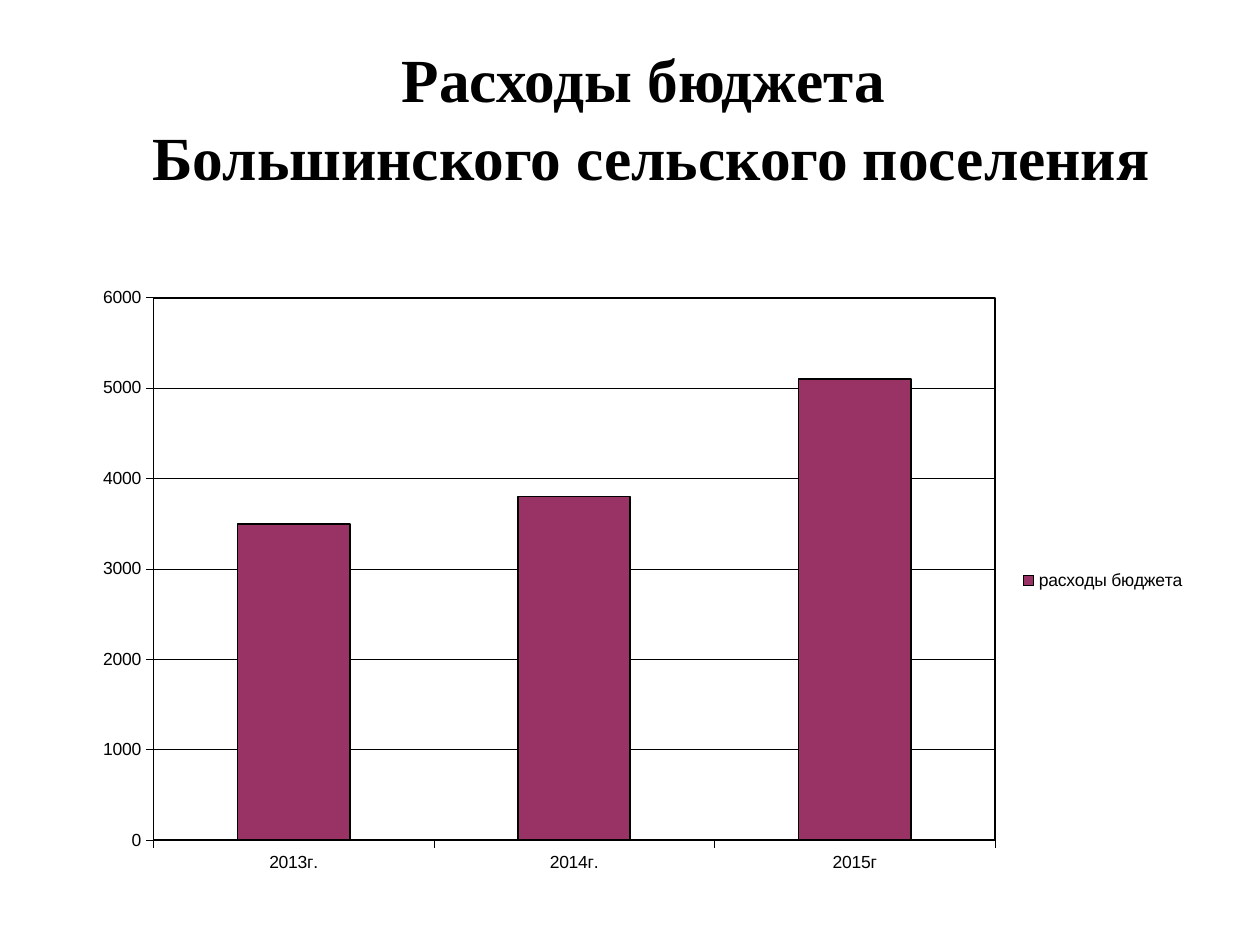
"""Build a slide with a column chart of the settlement's budget spending."""
from lxml import etree
from pptx import Presentation
from pptx import util as u
from pptx.chart import data as chart_data
from pptx.dml import color
from pptx.enum import chart as ch, text
from pptx.oxml import ns


def rgb(value):
    return color.RGBColor.from_string(value)


def style_line(line, width):
    line.color.rgb = rgb("000000")
    line.width = u.Pt(width)


presentation = Presentation()
presentation.slide_width = u.Cm(25.4)
presentation.slide_height = u.Cm(19.05)
slide = presentation.slides.add_slide(presentation.slide_layouts[5])

title = slide.shapes.title
title.left, title.top = u.Cm(1.7), u.Cm(0.64)
title.width, title.height = u.Cm(22.86), u.Cm(4.78)
frame = title.text_frame
frame.word_wrap = True
frame.auto_size = text.MSO_AUTO_SIZE.NONE
frame.vertical_anchor = text.MSO_ANCHOR.TOP
for index, line_text in enumerate(["Расходы бюджета ", "Большинского сельского поселения"]):
    paragraph = frame.add_paragraph() if index else frame.paragraphs[0]
    paragraph.alignment = text.PP_ALIGN.CENTER
    paragraph.line_spacing = 1.05
    paragraph.space_before = u.Pt(0)
    run = paragraph.add_run()
    run.text = line_text
    run.font.name = "Times New Roman"
    run.font.size = u.Pt(35)
    run.font.bold = True
    run.font.color.rgb = rgb("000000")

spending = chart_data.CategoryChartData()
spending.categories = ["2013г.", "2014г.", "2015г"]
spending.add_series("расходы бюджета", [3500, 3800, 5100])
chart = slide.shapes.add_chart(
    ch.XL_CHART_TYPE.COLUMN_CLUSTERED,
    u.Cm(1.63), u.Cm(5.56), u.Cm(22.53), u.Cm(12.29), spending,
).chart
chart.has_title = False
chart.font.name = "Arial"
chart.font.size = u.Pt(10)
chart.font.color.rgb = rgb("000000")
chart.has_legend = True
chart.legend.position = ch.XL_LEGEND_POSITION.RIGHT
chart.legend.include_in_layout = False

plot = chart.plots[0]
plot.gap_width = 150
plot.vary_by_categories = False
series = plot.series[0]
series.format.fill.solid()
series.format.fill.fore_color.rgb = rgb("993366")
style_line(series.format.line, 1)

for axis in (chart.category_axis, chart.value_axis):
    axis.major_tick_mark = ch.XL_TICK_MARK.OUTSIDE
    axis.minor_tick_mark = ch.XL_TICK_MARK.NONE
    style_line(axis.format.line, 0.25)
value_axis = chart.value_axis
value_axis.minimum_scale, value_axis.maximum_scale = 0, 6000
value_axis.major_unit = 1000
value_axis.has_major_gridlines = True
style_line(value_axis.major_gridlines.format.line, 0.25)

plot_area = plot._element.getparent()
for old_layout in plot_area.findall(ns.qn("c:layout")):
    plot_area.remove(old_layout)
layout = etree.Element(ns.qn("c:layout"))
manual = etree.SubElement(layout, ns.qn("c:manualLayout"))
settings = {"layoutTarget": "inner", "xMode": "edge", "yMode": "edge",
            "x": "0.065", "y": "0.036", "w": "0.753", "h": "0.89"}
for name, value in settings.items():
    etree.SubElement(manual, ns.qn("c:" + name)).set("val", value)
plot_area.insert(0, layout)

border = etree.SubElement(plot_area, ns.qn("c:spPr"))
etree.SubElement(border, ns.qn("a:noFill"))
outline = etree.SubElement(border, ns.qn("a:ln"), w=str(u.Pt(1)))
fill = etree.SubElement(outline, ns.qn("a:solidFill"))
etree.SubElement(fill, ns.qn("a:srgbClr"), val="000000")

presentation.save("out.pptx")
